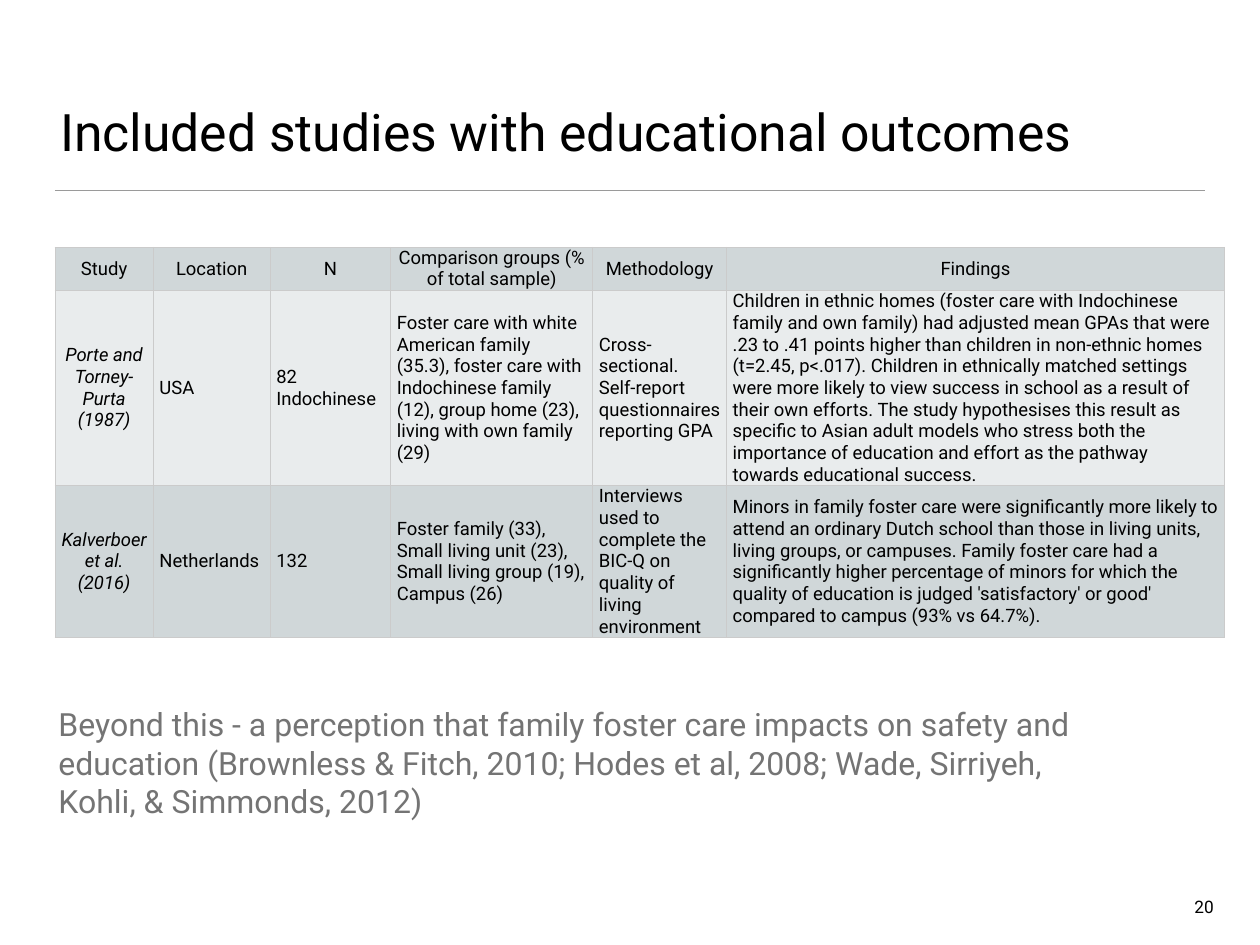
from lxml import etree
from pptx import Presentation
from pptx.dml.color import RGBColor
from pptx.enum.shapes import MSO_CONNECTOR
from pptx.enum.text import MSO_ANCHOR, MSO_AUTO_SIZE, PP_ALIGN
from pptx.oxml.ns import qn
from pptx.util import Inches, Pt

COLORS = {
    "text": "000000",
    "muted": "747474",
    "rule": "9A9A9A",
    "border": "CBCBCB",
    "dark_row": "D0D7D9",
    "light_row": "E9ECED",
}
FONT = "Roboto"
COL_WIDTHS = [1.11, 1.32, 1.36, 2.28, 1.51, 5.62]
ROW_HEIGHTS = [0.48, 2.15, 1.67]
STUDIES = [
    ["Study", "Location", "N", "Comparison groups (% of total sample)",
     "Methodology", "Findings"],
    ["Porte and Torney-Purta (1987)", "USA", "82 Indochinese",
     "Foster care with white American family (35.3), foster care with "
     "Indochinese family (12), group home (23), living with own family (29)",
     "Cross-sectional.\nSelf-report questionnaires reporting GPA",
     "Children in ethnic homes (foster care with Indochinese family and own "
     "family) had adjusted mean GPAs that were .23 to .41 points higher than "
     "children in non-ethnic homes (t=2.45, p<.017). Children in ethnically "
     "matched settings were more likely to view success in school as a result "
     "of their own efforts. The study hypothesises this result as specific to "
     "Asian adult models who stress both the importance of education and "
     "effort as the pathway towards educational success."],
    ["Kalverboer et al. (2016)", "Netherlands", "132",
     "Foster family (33), Small living unit (23), Small living group (19), "
     "Campus (26)",
     "Interviews used to complete the BIC-Q on quality of living environment",
     "Minors in family foster care were significantly more likely to attend "
     "an ordinary Dutch school than those in living units, living groups, or "
     "campuses. Family foster care had a significantly higher percentage of "
     "minors for which the quality of education is judged 'satisfactory' or "
     "good' compared to campus (93% vs 64.7%)."],
]


def rgb(name):
    return RGBColor.from_string(COLORS[name])


def write_text(tf, text, size, color="text", align=PP_ALIGN.LEFT, italic=False):
    for i, line in enumerate(text.split("\n")):
        p = tf.paragraphs[0] if i == 0 else tf.add_paragraph()
        p.alignment = align
        r = p.add_run()
        r.text = line
        r.font.name = FONT
        r.font.size = Pt(size)
        r.font.bold = False
        r.font.italic = italic
        r.font.color.rgb = rgb(color)


def set_frame(tf, wrap=True, anchor=MSO_ANCHOR.TOP):
    tf.word_wrap = wrap
    tf.auto_size = MSO_AUTO_SIZE.NONE
    tf.vertical_anchor = anchor
    tf.margin_left = tf.margin_right = Inches(0.06)
    tf.margin_top = tf.margin_bottom = Inches(0.06)


def set_title(s, text):
    sp = s.shapes.title
    sp.left, sp.top = Inches(0.62), Inches(0.36)
    sp.width, sp.height = Inches(12.97), Inches(1.53)
    set_frame(sp.text_frame, anchor=MSO_ANCHOR.BOTTOM)
    write_text(sp.text_frame, text, 42)


def add_text(s, text, left, top, width, height, size, wrap=True, **style):
    sp = s.shapes.add_textbox(Inches(left), Inches(top), Inches(width), Inches(height))
    set_frame(sp.text_frame, wrap)
    write_text(sp.text_frame, text, size, **style)


def add_rule(s, left, right, y):
    line = s.shapes.add_connector(
        MSO_CONNECTOR.STRAIGHT, Inches(left), Inches(y), Inches(right), Inches(y))
    line.line.color.rgb = rgb("rule")
    line.line.width = Pt(1)
    etree.SubElement(line._element.spPr, qn("a:effectLst"))


def set_borders(cell, widths):
    tcPr = cell._tc.get_or_add_tcPr()
    for side, width in widths.items():
        ln = etree.SubElement(tcPr, qn(f"a:ln{side}"), w=str(Pt(width)))
        fill = etree.SubElement(ln, qn("a:solidFill"))
        etree.SubElement(fill, qn("a:srgbClr"), val=COLORS["border"])


def format_cell(cell, row, col, text):
    cell.margin_left = cell.margin_right = Inches(0.07)
    cell.margin_top = cell.margin_bottom = 0
    cell.vertical_anchor = MSO_ANCHOR.MIDDLE
    heavy = {
        "L": col >= 4,
        "R": col in (3, 4),
        "T": col >= 4 and row > 0,
        "B": col >= 4 and row < len(STUDIES) - 1,
    }
    set_borders(cell, {side: 1 if on else 0.5 for side, on in heavy.items()})
    cell.fill.solid()
    cell.fill.fore_color.rgb = rgb("light_row" if row % 2 else "dark_row")
    centred = row == 0 or col == 0
    write_text(cell.text_frame, text, 15,
               align=PP_ALIGN.CENTER if centred else PP_ALIGN.LEFT,
               italic=row > 0 and col == 0)


def add_study_table(s, left, top):
    table = s.shapes.add_table(
        len(ROW_HEIGHTS), len(COL_WIDTHS), Inches(left), Inches(top),
        Inches(sum(COL_WIDTHS)), Inches(sum(ROW_HEIGHTS))).table
    for column, width in zip(table.columns, COL_WIDTHS):
        column.width = Inches(width)
    for row, height in zip(table.rows, ROW_HEIGHTS):
        row.height = Inches(height)
    for r, study in enumerate(STUDIES):
        for c, text in enumerate(study):
            format_cell(table.cell(r, c), r, c, text)


def main():
    prs = Presentation()
    prs.slide_width, prs.slide_height = Inches(14.22), Inches(10.67)
    s = prs.slides.add_slide(prs.slide_layouts[5])
    add_rule(s, 0.62, 13.6, 2.15)
    set_title(s, "Included studies with educational outcomes")
    add_study_table(s, 0.62, 2.79)
    add_text(s, "Beyond this - a perception that family foster care impacts on "
                "safety and education (Brownless & Fitch, 2010; Hodes et al, 2008; "
                "Wade, Sirriyeh, Kohli, & Simmonds, 2012)",
             0.6, 7.9, 11.9, 1.5, 26, color="muted")
    add_text(s, "20", 13.42, 10.06, 0.34, 0.33, 14, wrap=False, align=PP_ALIGN.RIGHT)
    prs.save("out.pptx")


if __name__ == "__main__":
    main()
